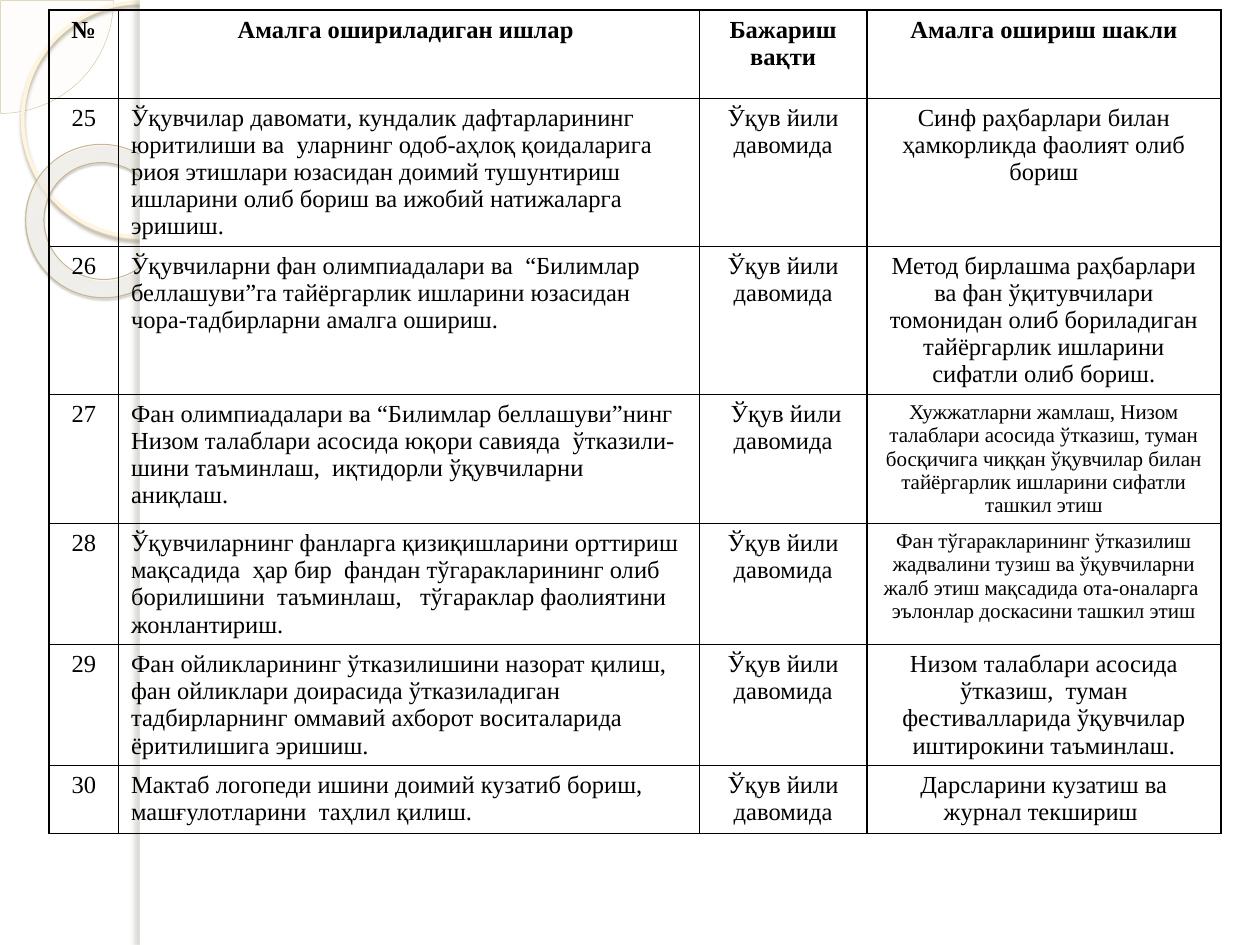
"""Build a slide with a school work plan table, items 25 to 30, over a ringed side panel."""
from lxml import etree
from pptx import Presentation, util as u
from pptx.dml.color import RGBColor
from pptx.enum import shapes, text
from pptx.oxml import parse_xml

NS = 'xmlns:a="http://schemas.openxmlformats.org/drawingml/2006/main"'
FORMS = shapes.MSO_SHAPE


def color(code):
    return RGBColor.from_string(code)


def decorate(form, box, fill=None, line=None, shadow=None):
    """Add an ornament; line is (colour, points), shadow is (colour, alpha, blur, distance, angle)."""
    ornament = slide.shapes.add_shape(form, *[u.Inches(v) for v in box])
    ornament.shadow.inherit = False
    if fill:
        ornament.fill.solid()
        ornament.fill.fore_color.rgb = color(fill)
    else:
        ornament.fill.background()
    if line:
        ornament.line.color.rgb = color(line[0])
        ornament.line.width = u.Pt(line[1])
    else:
        ornament.line.fill.background()
    if shadow:
        tint, alpha, blur, distance, angle = shadow
        effects = ornament._element.spPr.find("{*}effectLst")
        effects.append(parse_xml(
            f'<a:outerShdw {NS} blurRad="{u.Pt(blur)}" dist="{u.Pt(distance)}" '
            f'dir="{angle * 60000}" algn="tl" rotWithShape="0"><a:srgbClr val="{tint}">'
            f'<a:alpha val="{alpha * 1000}"/></a:srgbClr></a:outerShdw>'))
    return ornament


deck = Presentation()
deck.slide_width, deck.slide_height = u.Inches(10), u.Inches(7.5)
slide = deck.slides.add_slide(deck.slide_layouts[6])
slide.background.fill.solid()
slide.background.fill.fore_color.rgb = color("FFFFFF")

quarter = decorate(FORMS.PIE, (-0.89, -0.89, 1.79, 1.79), "FEFAF4", ("D3C39F", 0.25))
quarter.adjustments[0] = 0
quarter.adjustments[1] = 54.02
quarter_tint = quarter._element.spPr.find("{*}solidFill")[0]
etree.SubElement(quarter_tint, quarter_tint.tag.replace("srgbClr", "alpha"), val="33000")

decorate(FORMS.OVAL, (0.18, 0.02, 1.86, 1.86), None, ("FFF5DE", 2.15), ("B0A68F", 85, 2, 2, 90))

ring = decorate(FORMS.DONUT, (0.2, 1.15, 1.23, 1.21), None, ("C7B893", 0.58),
                ("5A5444", 35, 1, 1.2, 75))
ring.rotation = 38.6
ring.adjustments[0] = 0.12
stops = "".join(
    f'<a:gs pos="{place * 1000}"><a:srgbClr val="{tint}"><a:alpha val="{alpha * 1000}"/></a:srgbClr></a:gs>'
    for place, tint, alpha in [(0, "FFFCF6", 70), (70, "FFFEFB", 55), (100, "F0D28E", 60)])
ring_fill = ring._element.spPr.find("{*}noFill")
ring_fill.getparent().replace(ring_fill, parse_xml(
    f'<a:gradFill {NS} rotWithShape="1"><a:gsLst>{stops}</a:gsLst><a:path path="circle">'
    '<a:fillToRect l="-408000" t="-50000" r="508000" b="150000"/></a:path></a:gradFill>'))

decorate(FORMS.RECTANGLE, (1.11, 0, 8.89, 7.5), "FFFFFF")
decorate(FORMS.RECTANGLE, (1.11, 0, 0.08, 7.5), "FFFFFF", None, ("736F63", 25, 3, 3, 180))

WHEN = "Ўқув йили давомида"
plan_rows = [
    ("№", "Амалга ошириладиган ишлар ", "Бажариш вақти", "Амалга ошириш шакли"),
    ("25", "Ўқувчилар давомати, кундалик дафтарларининг юритилиши ва  уларнинг одоб-аҳлоқ "
     "қоидаларига риоя этишлари юзасидан доимий тушунтириш ишларини олиб бориш ва ижобий "
     "натижаларга эришиш.",
     WHEN, "Синф раҳбарлари билан ҳамкорликда фаолият олиб бориш"),
    ("26", "Ўқувчиларни фан олимпиадалари ва  “Билимлар беллашуви”га тайёргарлик ишларини "
     "юзасидан чора-тадбирларни амалга ошириш.",
     WHEN, "Метод бирлашма раҳбарлари ва фан ўқитувчилари томонидан олиб бориладиган "
     "тайёргарлик ишларини сифатли олиб бориш."),
    ("27", "Фан олимпиадалари ва “Билимлар беллашуви”нинг Низом талаблари асосида юқори "
     "савияда  ўтказили-шини таъминлаш,  иқтидорли ўқувчиларни аниқлаш.",
     " " + WHEN, "Хужжатларни жамлаш, Низом талаблари асосида ўтказиш, туман босқичига чиққан "
     "ўқувчилар билан тайёргарлик ишларини сифатли ташкил этиш"),
    ("28", "Ўқувчиларнинг фанларга қизиқишларини орттириш мақсадида  ҳар бир  фандан "
     "тўгаракларининг олиб борилишини  таъминлаш,   тўгараклар фаолиятини жонлантириш.",
     WHEN, "Фан тўгаракларининг ўтказилиш жадвалини тузиш ва ўқувчиларни жалб этиш мақсадида "
     "ота-оналарга  эълонлар доскасини ташкил этиш"),
    ("29", "Фан ойликларининг ўтказилишини назорат қилиш, фан ойликлари доирасида "
     "ўтказиладиган тадбирларнинг оммавий ахборот воситаларида ёритилишига эришиш.",
     WHEN, "Низом талаблари асосида ўтказиш,  туман фестивалларида ўқувчилар иштирокини "
     "таъминлаш."),
    ("30", "Мактаб логопеди ишини доимий кузатиб бориш, машғулотларини  таҳлил қилиш.",
     WHEN, "Дарсларини кузатиш ва журнал текшириш "),
]
column_widths = [0.55, 4.61, 1.33, 2.81]
row_heights = [0.7, 1.17, 1.17, 1.02, 0.96, 0.96, 0.54]
small_print = {(3, 3), (4, 3)}

plan = slide.shapes.add_table(len(plan_rows), len(column_widths), u.Inches(0.39), u.Inches(0.08),
                              u.Inches(sum(column_widths)), u.Inches(sum(row_heights))).table
plan.first_row = plan.horz_banding = False
for column, width in zip(plan.columns, column_widths):
    column.width = u.Inches(width)

for r, (entries, height) in enumerate(zip(plan_rows, row_heights)):
    plan.rows[r].height = u.Inches(height)
    for c, entry in enumerate(entries):
        cell = plan.cell(r, c)
        cell.text = entry
        cell.fill.background()
        paragraph = cell.text_frame.paragraphs[0]
        left_aligned = r > 0 and c == 1
        paragraph.alignment = text.PP_ALIGN.LEFT if left_aligned else text.PP_ALIGN.CENTER
        paragraph.font.name = "Times New Roman"
        paragraph.font.size = u.Pt(12 if (r, c) in small_print else 14)
        paragraph.font.bold = r == 0
        paragraph.font.color.rgb = color("000000")
        for position, side in enumerate(("lnL", "lnR", "lnT", "lnB")):
            cell._tc.tcPr.insert(position, parse_xml(
                f'<a:{side} {NS} w="{u.Pt(1)}"><a:solidFill><a:srgbClr val="000000"/>'
                f'</a:solidFill></a:{side}>'))

deck.save("out.pptx")
